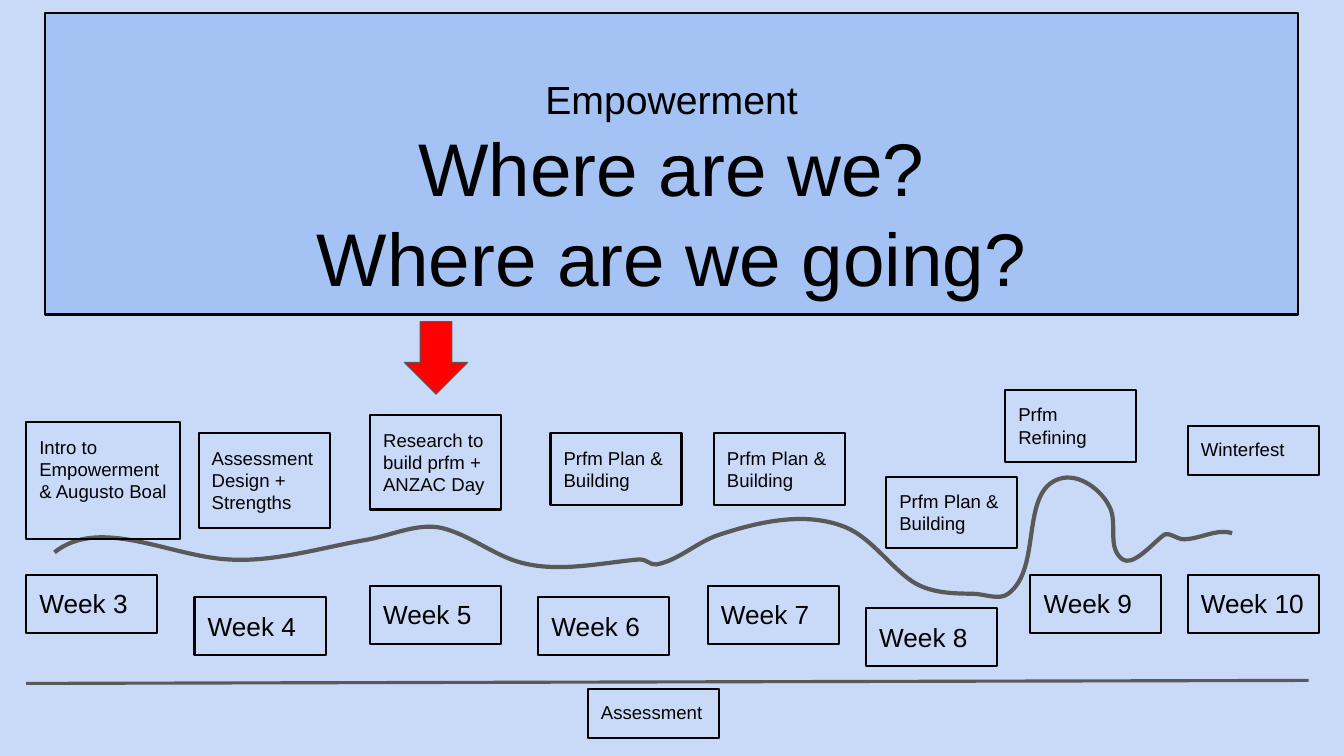
import pptx
import pptx.util
import pptx.dml.color
import pptx.enum.shapes
import pptx.enum.text
import pptx.oxml.ns
import lxml.etree

Inches = pptx.util.Inches
Pt = pptx.util.Pt
RGBColor = pptx.dml.color.RGBColor

# Content
TITLE_LINES = [("Empowerment", 28), ("Where are we?", 53.3), ("Where are we going?", 53.3)]

# Topic, left, top, lines of height; week, left, steps below the highest week
WEEKS = [
    ("Intro to Empowerment & Augusto Boal", 0.26, 4.19, 4, "Week 3", 0.26, 0),
    ("Assessment Design + Strengths", 1.97, 4.30, 3, "Week 4", 1.93, 2),
    ("Research to build prfm + ANZAC Day", 3.67, 4.12, 3, "Week 5", 3.67, 1),
    ("Prfm Plan & Building", 5.46, 4.30, 2, "Week 6", 5.34, 2),
    ("Prfm Plan & Building", 7.08, 4.30, 2, "Week 7", 7.02, 1),
    ("Prfm Plan & Building", 8.79, 4.73, 2, "Week 8", 8.59, 3),
    ("Prfm Refining", 9.97, 3.87, 2, "Week 9", 10.22, 0),
    ("Winterfest", 11.78, 4.23, 1, "Week 10", 11.78, 0),
]
ASSESSMENT = ("Assessment", 5.83, 6.84, 1)

# Winding road in hundredths of an inch: start, then two handles and an end for each bend
ROAD_START = (54, 548)
ROAD_BENDS = [
    ((99, 512), (169, 552), (226, 555)),
    ((271, 558), (316, 544), (361, 536)),
    ((387, 532), (414, 518), (439, 524)),
    ((462, 530), (481, 544), (502, 553)),
    ((543, 571), (590, 559), (634, 555)),
    ((640, 554), (645, 561), (651, 560)),
    ((673, 556), (691, 538), (712, 531)),
    ((751, 518), (795, 508), (833, 521)),
    ((862, 530), (880, 560), (905, 577)),
    ((922, 588), (944, 589), (964, 589)),
    ((976, 589), (991, 596), (1000, 589)),
    ((1034, 564), (1011, 487), (1051, 475)),
    ((1070, 469), (1093, 486), (1101, 504)),
    ((1108, 519), (1099, 541), (1111, 553)),
    ((1122, 565), (1141, 541), (1154, 531)),
    ((1159, 527), (1167, 535), (1174, 535)),
    ((1190, 535), (1207, 524), (1222, 529)),
]

# Style
FONT = "Arial"
BLACK = RGBColor(0x00, 0x00, 0x00)
GREY = RGBColor(0x59, 0x59, 0x59)
RED = RGBColor(0xFF, 0x00, 0x00)
PALE_BLUE = RGBColor(0xC9, 0xDA, 0xF8)
BLUE = RGBColor(0xA4, 0xC2, 0xF4)
PADDING = 0.13
BOX_WIDTH, WIDE_BOX_WIDTH = 1.3, 1.53
WEEK_TOP, WEEK_STEP, WEEK_HEIGHT = 5.7, 0.11, 0.58
TOPIC_SIZE, WEEK_SIZE = 13.3, 18.7
LINE_HEIGHT = 0.225


def set_outline(shape, color, width):
    shape.line.color.rgb = color
    shape.line.width = Pt(width)


def pad_text(shape):
    frame = shape.text_frame
    frame.word_wrap = True
    frame.margin_left = frame.margin_right = Inches(PADDING)
    frame.margin_top = frame.margin_bottom = Inches(PADDING)
    return frame


def add_run(paragraph, text, size):
    run = paragraph.add_run()
    run.text = text
    run.font.name = FONT
    run.font.size = Pt(size)
    run.font.color.rgb = BLACK


def add_box(slide, text, left, top, width, height, size):
    box = slide.shapes.add_textbox(Inches(left), Inches(top), Inches(width), Inches(height))
    set_outline(box, BLACK, 1.5)
    frame = pad_text(box)
    frame.auto_size = pptx.enum.text.MSO_AUTO_SIZE.SHAPE_TO_FIT_TEXT
    add_run(frame.paragraphs[0], text, size)


def add_topic(slide, text, left, top, lines):
    width = WIDE_BOX_WIDTH if lines == 4 else BOX_WIDTH
    add_box(slide, text, left, top, width, 2 * PADDING + lines * LINE_HEIGHT, TOPIC_SIZE)


def add_title(slide):
    title = slide.shapes.add_shape(pptx.enum.shapes.MSO_SHAPE.RECTANGLE,
                                   Inches(0.45), Inches(0.13), Inches(12.42), Inches(2.99))
    title.shadow.inherit = False
    title.fill.solid()
    title.fill.fore_color.rgb = BLUE
    set_outline(title, BLACK, 1.5)
    frame = pad_text(title)
    frame.vertical_anchor = pptx.enum.text.MSO_ANCHOR.BOTTOM
    paragraph = frame.paragraphs[0]
    paragraph.alignment = pptx.enum.text.PP_ALIGN.CENTER
    for index, (text, size) in enumerate(TITLE_LINES):
        if index:
            paragraph.add_line_break()
        add_run(paragraph, text, size)


def add_road(slide):
    builder = slide.shapes.build_freeform(*ROAD_START, scale=Inches(0.01))
    builder.add_line_segments([point for bend in ROAD_BENDS for point in bend], close=False)
    road = builder.convert_to_shape()
    road.shadow.inherit = False
    road.fill.background()
    set_outline(road, GREY, 3)
    # Turn every three straight segments into one curve
    qn = pptx.oxml.ns.qn
    segments = list(road._element.iter(qn("a:lnTo")))
    for first in range(0, len(segments), 3):
        curve = lxml.etree.Element(qn("a:cubicBezTo"))
        segments[first].addprevious(curve)
        for segment in segments[first:first + 3]:
            curve.append(segment[0])
            segment.getparent().remove(segment)


def add_baseline(slide):
    line = slide.shapes.add_connector(pptx.enum.shapes.MSO_CONNECTOR.STRAIGHT,
                                      Inches(0.26), Inches(6.78), Inches(12.98), Inches(6.75))
    set_outline(line, GREY, 2.25)
    lxml.etree.SubElement(line._element.spPr, pptx.oxml.ns.qn("a:effectLst"))


def add_marker(slide):
    arrow = slide.shapes.add_shape(pptx.enum.shapes.MSO_SHAPE.DOWN_ARROW,
                                   Inches(4.01), Inches(3.19), Inches(0.63), Inches(0.72))
    arrow.shadow.inherit = False
    arrow.fill.solid()
    arrow.fill.fore_color.rgb = RED
    set_outline(arrow, GREY, 0.75)


def main():
    presentation = pptx.Presentation()
    presentation.slide_width = Inches(13.33)
    presentation.slide_height = Inches(7.5)
    slide = presentation.slides.add_slide(presentation.slide_layouts[6])
    slide.background.fill.solid()
    slide.background.fill.fore_color.rgb = PALE_BLUE

    add_title(slide)
    add_road(slide)
    for topic, topic_left, topic_top, lines, week, week_left, steps in WEEKS:
        add_topic(slide, topic, topic_left, topic_top, lines)
        add_box(slide, week, week_left, WEEK_TOP + steps * WEEK_STEP,
                BOX_WIDTH, WEEK_HEIGHT, WEEK_SIZE)
    add_baseline(slide)
    add_topic(slide, *ASSESSMENT)
    add_marker(slide)
    presentation.save("out.pptx")


if __name__ == "__main__":
    main()
